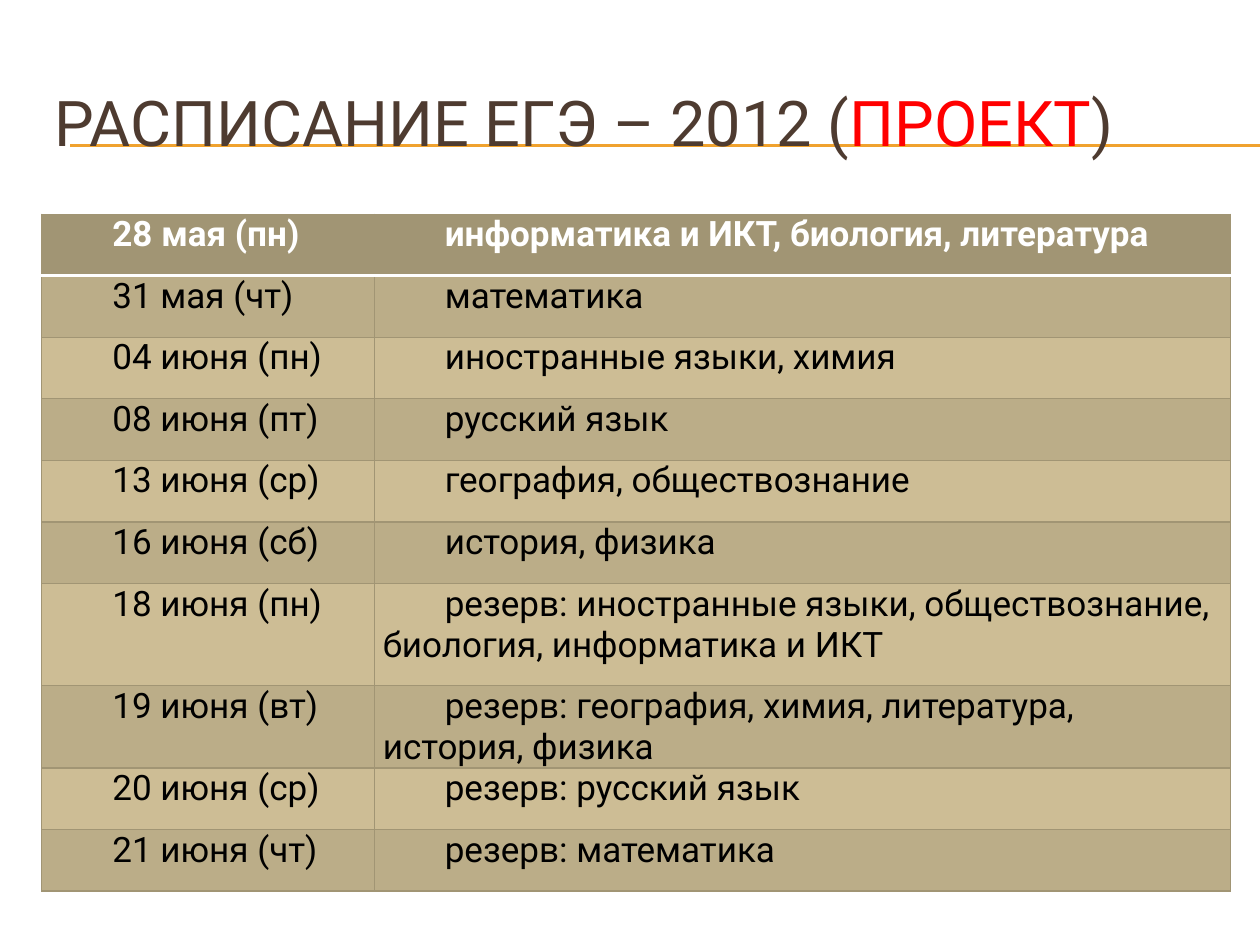
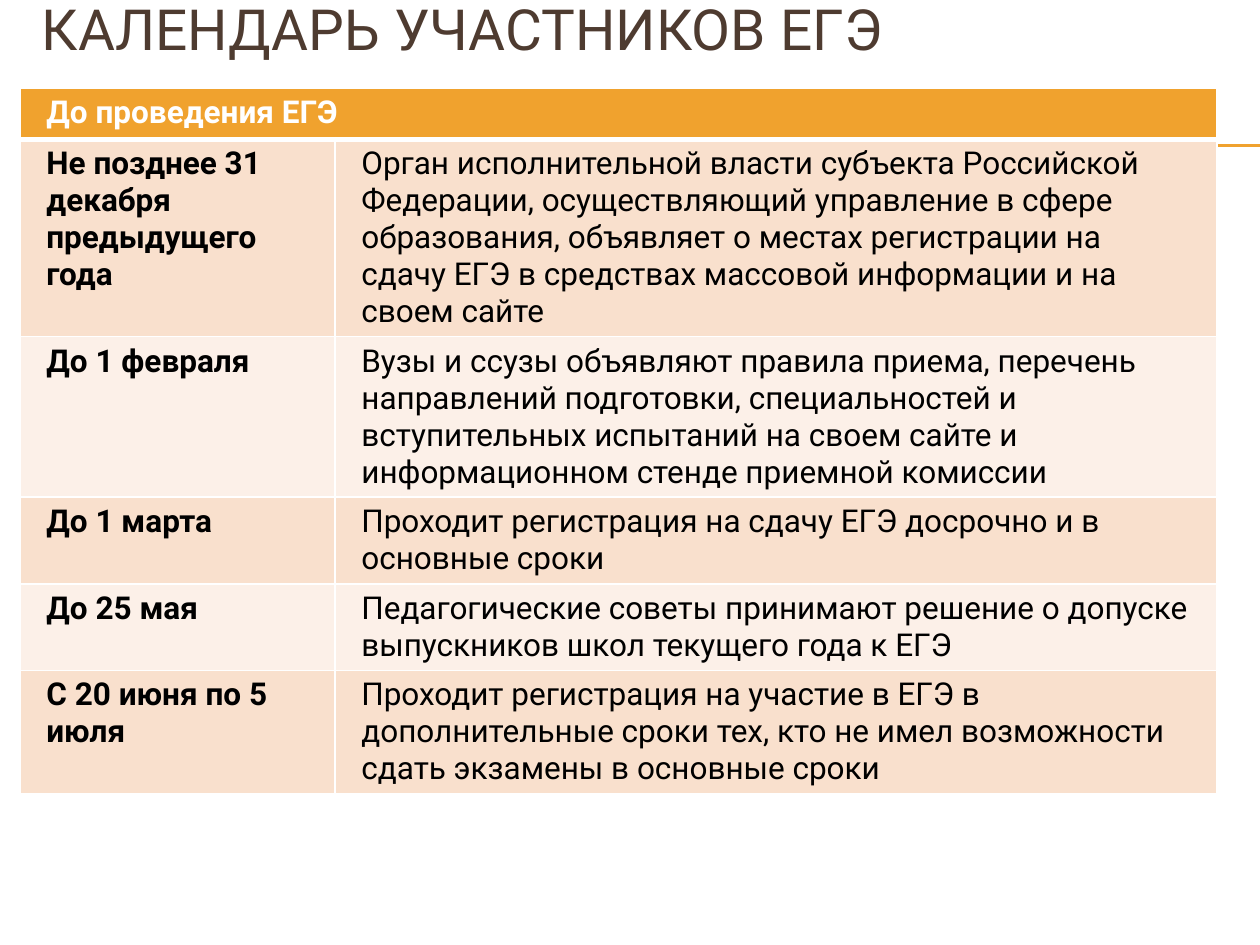
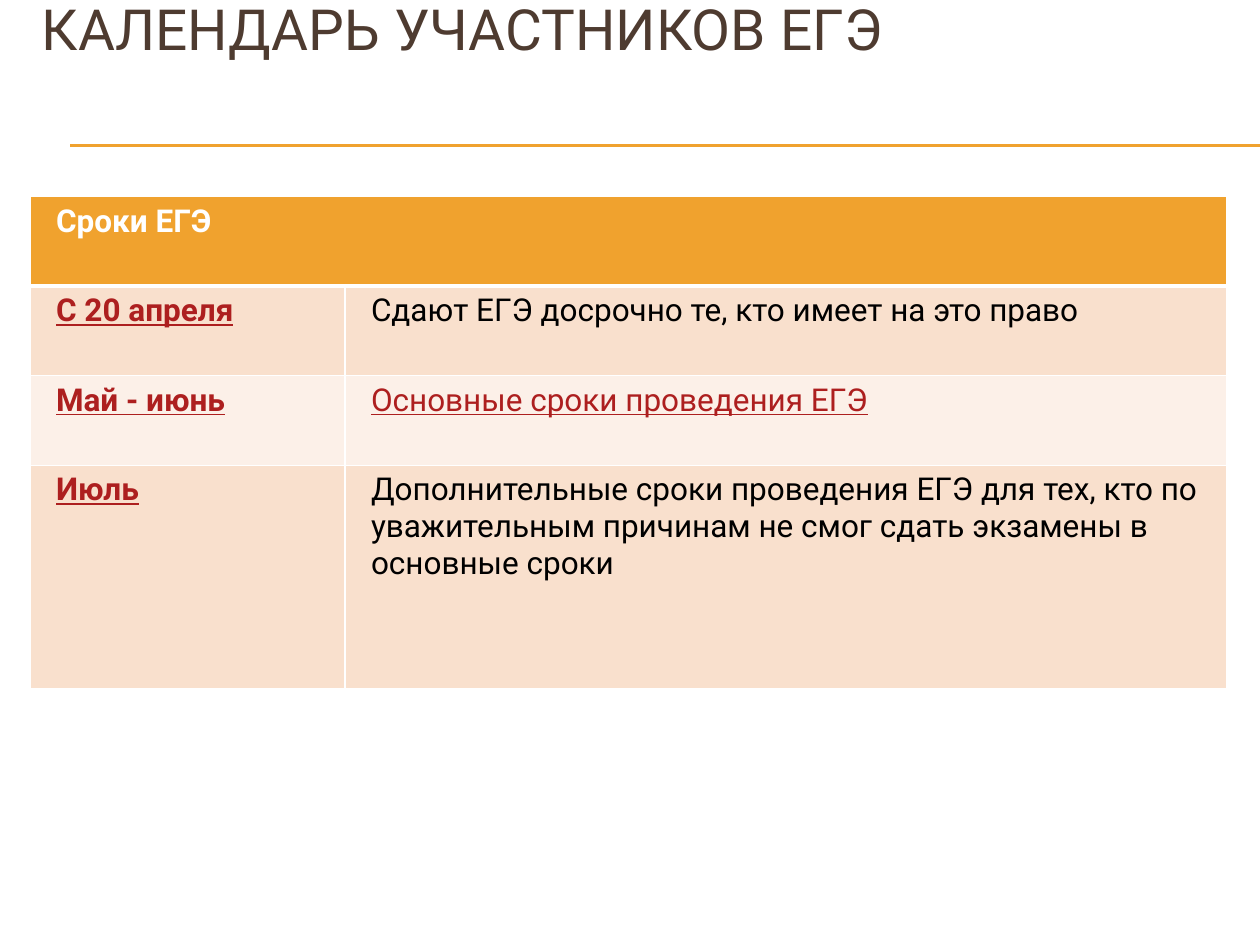
from dataclasses import dataclass
from typing import Any, NamedTuple

from lxml.etree import SubElement
from pptx import Presentation
from pptx.dml.color import RGBColor
from pptx.enum.shapes import MSO_CONNECTOR as Connector
from pptx.enum.text import MSO_ANCHOR as Anchor, MSO_AUTO_SIZE as AutoSize, PP_ALIGN as Align
from pptx.oxml.ns import qn
from pptx.util import Pt

FONT_NAME = "Roboto"
WHITE = RGBColor(0xFF, 0xFF, 0xFF)
BLACK = RGBColor(0x00, 0x00, 0x00)
RED = RGBColor(0xFF, 0x00, 0x00)
BROWN = RGBColor(0x4E, 0x3B, 0x30)
ORANGE = RGBColor(0xF0, 0xA2, 0x2E)
LINK_RED = RGBColor(0xAD, 0x1F, 0x1F)
OLIVE = RGBColor(0xA1, 0x95, 0x74)
DARK_SAND = RGBColor(0xBB, 0xAD, 0x88)
LIGHT_SAND = RGBColor(0xCD, 0xBD, 0x95)
PEACH = RGBColor(0xF9, 0xE0, 0xCD)
PALE_PEACH = RGBColor(0xFC, 0xF0, 0xE8)

TITLE_ONLY_LAYOUT = 5
RULE_LEFT, RULE_RIGHT = 40.3, 720
RULE_TOPS = (82.8, 83.5)


class Box(NamedTuple):
    left: float
    top: float
    width: float
    height: float


class Row(NamedTuple):
    date: str
    event: str = ""
    height: float = 29.2
    date_linked: bool = False
    event_linked: bool = False


class Border(NamedTuple):
    color: RGBColor
    width: float


@dataclass(frozen=True)
class TableStyle:
    header_fill: RGBColor
    band_fills: tuple[RGBColor, RGBColor]
    border: Border
    header_border: Border
    side_margin: float
    top_margin: float
    font_size: float
    first_line_indent: float
    bold_dates: bool


@dataclass(frozen=True)
class TitleStyle:
    box: Box
    font_size: float


@dataclass(frozen=True)
class TableSlide:
    title_style: TitleStyle
    title: list[tuple[str, RGBColor]]
    table_style: TableStyle
    table_box: Box
    column_widths: tuple[float, float]
    rows: list[Row]


SCHEDULE_STYLE = TableStyle(OLIVE, (DARK_SAND, LIGHT_SAND), Border(OLIVE, 0.79),
                            Border(WHITE, 2), 5, 0, 20, 35.4, False)
CALENDAR_STYLE = TableStyle(ORANGE, (PEACH, PALE_PEACH), Border(WHITE, 1),
                            Border(WHITE, 3), 15, 3.6, 18, 0, True)
SCHEDULE_TITLE = TitleStyle(Box(23.8, 36, 684, 66.2), 36)
CALENDAR_TITLE = TitleStyle(Box(16.6, 3, 684, 26), 32.4)
CALENDAR_HEADING = [("КАЛЕНДАРЬ УЧАСТНИКОВ ЕГЭ", BROWN)]
CALENDAR_COLUMNS = (180, 504)
SCHEDULE_ROW = 35.2
TERM_ROW = 51.2

EXAM_DAYS = [
    ("28 мая (пн)", "информатика и ИКТ, биология, литература"),
    ("31 мая (чт)", "математика"),
    ("04 июня (пн)", "иностранные языки, химия"),
    ("08 июня (пт)", "русский язык"),
    ("13 июня (ср)", "география, обществознание"),
    ("16 июня (сб)", "история, физика"),
    ("18 июня (пн)", "резерв: иностранные языки, обществознание, биология, информатика и ИКТ", 58.3),
    ("19 июня (вт)", "резерв: география, химия, литература, история, физика"),
    ("20 июня (ср)", "резерв: русский язык"),
    ("21 июня (чт)", "резерв: математика"),
]
PREPARATION_ROWS = [
    Row("До проведения ЕГЭ"),
    Row("Не позднее 31 декабря предыдущего года",
        "Орган исполнительной власти субъекта Российской Федерации, осуществляющий "
        "управление в сфере образования, объявляет о местах регистрации на сдачу "
        "ЕГЭ в средствах массовой информации и на своем сайте"),
    Row("До 1 февраля",
        "Вузы и ссузы объявляют правила приема, перечень направлений подготовки, "
        "специальностей и вступительных испытаний на своем сайте и информационном "
        "стенде приемной комиссии"),
    Row("До 1 марта", "Проходит регистрация на сдачу ЕГЭ досрочно и в основные сроки"),
    Row("До 25 мая",
        "Педагогические советы принимают решение о допуске выпускников школ "
        "текущего года к ЕГЭ"),
    Row("С 20 июня по 5 июля",
        "Проходит регистрация на участие в ЕГЭ в дополнительные сроки тех, кто не "
        "имел возможности сдать экзамены в основные сроки"),
]
TERM_ROWS = [
    Row("Сроки ЕГЭ", height=TERM_ROW),
    Row("С 20 апреля", "Сдают ЕГЭ досрочно те, кто имеет на это право", TERM_ROW, True),
    Row("Май - июнь", "Основные сроки проведения ЕГЭ", TERM_ROW, True, True),
    Row("Июль",
        "Дополнительные сроки проведения ЕГЭ для тех, кто по уважительным причинам "
        "не смог сдать экзамены в основные сроки", 127.6, True),
]

SLIDES = [
    TableSlide(SCHEDULE_TITLE,
               [("РАСПИСАНИЕ ЕГЭ – 2012 (", BROWN), ("ПРОЕКТ", RED), (")", BROWN)],
               SCHEDULE_STYLE, Box(23.8, 122.4, 679.5, 391), (190, 489.5),
               [Row(date, event, *(height or [SCHEDULE_ROW]))
                for date, event, *height in EXAM_DAYS]),
    TableSlide(CALENDAR_TITLE, CALENDAR_HEADING, CALENDAR_STYLE,
               Box(11.5, 50.4, 684, 412.6), CALENDAR_COLUMNS, PREPARATION_ROWS),
    TableSlide(CALENDAR_TITLE, CALENDAR_HEADING, CALENDAR_STYLE,
               Box(17, 112.3, 684, 281.5), CALENDAR_COLUMNS, TERM_ROWS),
]


def apply_format(target: Any, values: dict[str, Any]) -> None:
    for name, value in values.items():
        setattr(target, name, value)


def add_run(paragraph: Any, text: str, color: RGBColor, size: float,
            bold: bool = False, underline: bool = False) -> None:
    run = paragraph.add_run()
    run.text = text
    apply_format(run.font, {"name": FONT_NAME, "size": Pt(size), "bold": bold,
                            "underline": underline})
    run.font.color.rgb = color


def add_master_rules(presentation: Any, slide: Any) -> None:
    master_tree = presentation.slide_master.shapes.element
    next_id = max(shape.shape_id for shape in presentation.slide_master.shapes) + 1
    for shape_id, top in enumerate(RULE_TOPS, next_id):
        rule = slide.shapes.add_connector(Connector.STRAIGHT, Pt(RULE_LEFT), Pt(top),
                                          Pt(RULE_RIGHT), Pt(top))
        rule.line.color.rgb = ORANGE
        rule.line.width = Pt(0.75)
        SubElement(rule.element.spPr, qn("a:effectLst"))
        rule.element.nvCxnSpPr.cNvPr.set("id", str(shape_id))
        master_tree.append(rule.element)


def fill_title(title: Any, style: TitleStyle, parts: list[tuple[str, RGBColor]]) -> None:
    apply_format(title, {name: Pt(value) for name, value in style.box._asdict().items()})
    apply_format(title.text_frame, {"word_wrap": True, "auto_size": AutoSize.NONE,
                                    "vertical_anchor": Anchor.MIDDLE})
    paragraph = title.text_frame.paragraphs[0]
    paragraph.alignment = Align.LEFT
    for text, color in parts:
        add_run(paragraph, text, color, style.font_size)


def set_borders(cell: Any, borders: dict[str, Border]) -> None:
    properties = cell._tc.get_or_add_tcPr()
    for position, (side, border) in enumerate(borders.items()):
        line = SubElement(properties, qn(f"a:ln{side}"), w=str(Pt(border.width)))
        fill = SubElement(line, qn("a:solidFill"))
        SubElement(fill, qn("a:srgbClr"), val=str(border.color))
        properties.insert(position, line)


def format_cell(cell: Any, style: TableStyle, row_index: int) -> None:
    side, top = Pt(style.side_margin), Pt(style.top_margin)
    apply_format(cell, {"margin_left": side, "margin_right": side, "margin_top": top,
                        "margin_bottom": top, "vertical_anchor": Anchor.TOP})
    cell.fill.solid()
    cell.fill.fore_color.rgb = (style.band_fills[(row_index - 1) % 2] if row_index
                                else style.header_fill)
    set_borders(cell, {
        "L": style.border,
        "R": style.border,
        "T": style.header_border if row_index == 1 else style.border,
        "B": style.border if row_index else style.header_border,
    })


def write_cell(cell: Any, text: str, style: TableStyle, is_header: bool,
               bold: bool, linked: bool) -> None:
    paragraph = cell.text_frame.paragraphs[0]
    if style.first_line_indent:
        properties = paragraph._p.get_or_add_pPr()
        properties.set("marL", "0")
        properties.set("indent", str(Pt(style.first_line_indent)))
    color = WHITE if is_header else LINK_RED if linked else BLACK
    add_run(paragraph, text, color, style.font_size, bold, linked)


def add_exam_table(slide: Any, content: TableSlide) -> None:
    style = content.table_style
    frame = slide.shapes.add_table(len(content.rows), len(content.column_widths),
                                   *map(Pt, content.table_box))
    table = frame.table
    for column, width in zip(table.columns, content.column_widths):
        column.width = Pt(width)
    for row_index, row in enumerate(content.rows):
        table.rows[row_index].height = Pt(row.height)
        is_header = row_index == 0
        texts = ((row.date, is_header or style.bold_dates, row.date_linked),
                 (row.event, is_header, row.event_linked))
        for column_index, (text, bold, linked) in enumerate(texts):
            cell = table.cell(row_index, column_index)
            format_cell(cell, style, row_index)
            if text:
                write_cell(cell, text, style, is_header, bold, linked)
        if not row.event:
            table.cell(row_index, 0).merge(table.cell(row_index, 1))
    frame.height = Pt(content.table_box.height)


def main() -> None:
    presentation = Presentation()
    apply_format(presentation, {"slide_width": Pt(720), "slide_height": Pt(540)})
    layout = presentation.slide_layouts[TITLE_ONLY_LAYOUT]
    for content in SLIDES:
        slide = presentation.slides.add_slide(layout)
        fill_title(slide.shapes.title, content.title_style, content.title)
        add_exam_table(slide, content)
    add_master_rules(presentation, presentation.slides[0])
    presentation.save("out.pptx")


if __name__ == "__main__":
    main()
